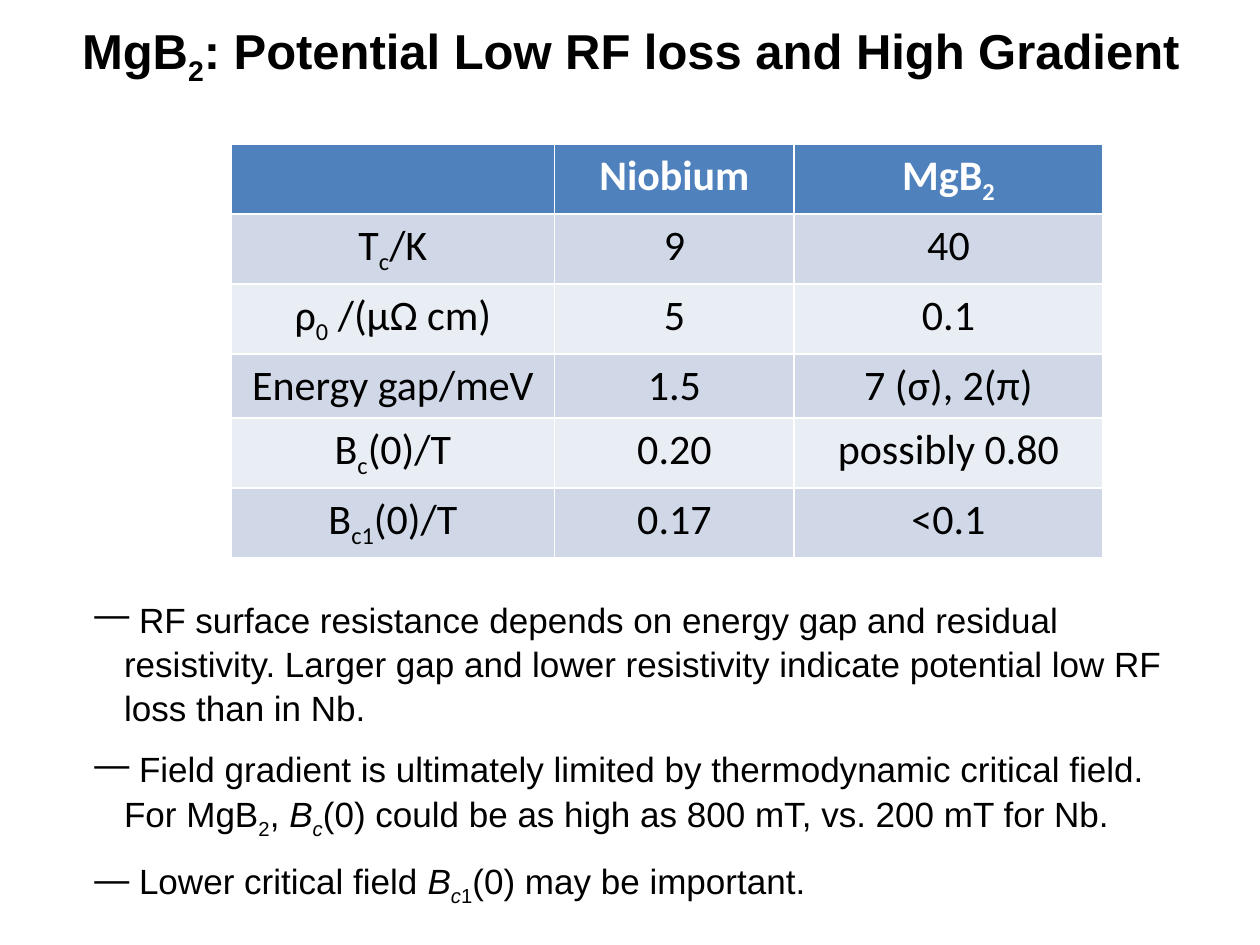
from dataclasses import dataclass

import pptx
import pptx.dml.color
import pptx.enum.text
import pptx.oxml
import pptx.oxml.ns
import pptx.util

Pt = pptx.util.Pt
RGB = pptx.dml.color.RGBColor.from_string
CENTER = pptx.enum.text.PP_ALIGN.CENTER


@dataclass(frozen=True)
class Theme:
    heading_font: str = "Arial"
    table_font: str = "Calibri"
    title_size: int = 28
    table_size: int = 24
    body_size: int = 20
    text: str = "000000"
    header_text: str = "FFFFFF"
    header_fill: str = "4F81BD"
    band_fills: tuple = ("D0D8E8", "E9EDF4")


THEME = Theme()

# Text is a list of pieces: (wording, flags), where flags may hold
# "s" for subscript and "i" for italic.
TITLE = [("MgB", ""), ("2", "s"), (": Potential Low RF loss and High Gradient", "")]

TABLE_ROWS = [
    [[], [("Niobium", "")], [("MgB", ""), ("2", "s")]],
    [[("T", ""), ("c", "s"), ("/K", "")], [("9", "")], [("40", "")]],
    [[("ρ", ""), ("0", "s"), (" /(μΩ cm)", "")], [("5", "")], [("0.1", "")]],
    [[("Energy gap/meV", "")], [("1.5", "")], [("7 (σ), 2(π)", "")]],
    [[("B", ""), ("c", "s"), ("(0)/T", "")], [("0.20", "")], [("possibly 0.80", "")]],
    [[("B", ""), ("c1", "s"), ("(0)/T", "")], [("0.17", "")], [("<0.1", "")]],
]
COLUMN_WIDTHS = [185, 136.8, 176.4]
ROW_HEIGHT = 36.72

BULLETS = [
    [(" RF surface resistance depends on energy gap and residual resistivity. "
      "Larger gap and lower resistivity indicate potential low RF loss than in Nb.", "")],
    [(" Field gradient is ultimately limited by thermodynamic critical field. For MgB", ""),
     ("2", "s"), (", ", ""), ("B", "i"), ("c", "si"),
     ("(0) could be as high as 800 mT, vs. 200 mT for Nb.", "")],
    [(" Lower critical field ", ""), ("B", "i"), ("c", "si"), ("1", "s"),
     ("(0) may be important.", "")],
]


def write_pieces(paragraph, pieces, font_name, size, color, bold=False):
    for wording, flags in pieces:
        run = paragraph.add_run()
        run.text = wording
        run.font.name = font_name
        run.font.size = Pt(size)
        run.font.bold = bold
        run.font.italic = "i" in flags
        run.font.color.rgb = RGB(color)
        if "s" in flags:
            run._r.get_or_add_rPr().set("baseline", "-25000")


def set_bullet(paragraph, character, indent):
    """Give the paragraph a hanging bullet and half a line of space before it."""
    properties = paragraph._p.get_or_add_pPr()
    properties.set("marL", str(Pt(indent)))
    properties.set("indent", str(-Pt(indent)))
    namespace = pptx.oxml.ns.nsdecls("a")
    for xml in (
        f'<a:spcBef {namespace}><a:spcPct val="50000"/></a:spcBef>',
        f'<a:buChar {namespace} char="{character}"/>',
    ):
        properties.append(pptx.oxml.parse_xml(xml))


def add_title(slide):
    title = slide.shapes.title
    title.left, title.top, title.width, title.height = Pt(24.5), Pt(8), Pt(672), Pt(41)
    frame = title.text_frame
    frame.word_wrap = False
    frame.auto_size = pptx.enum.text.MSO_AUTO_SIZE.SHAPE_TO_FIT_TEXT
    frame.vertical_anchor = pptx.enum.text.MSO_ANCHOR.TOP
    paragraph = frame.paragraphs[0]
    paragraph.alignment = CENTER
    write_pieces(paragraph, TITLE, THEME.heading_font, THEME.title_size, THEME.text, bold=True)


def add_property_table(slide):
    table = slide.shapes.add_table(
        len(TABLE_ROWS), len(COLUMN_WIDTHS), Pt(132), Pt(82.2),
        Pt(sum(COLUMN_WIDTHS)), Pt(ROW_HEIGHT * len(TABLE_ROWS)),
    ).table
    for column, width in zip(table.columns, COLUMN_WIDTHS):
        column.width = Pt(width)
    for row_index, row in enumerate(TABLE_ROWS):
        is_header = row_index == 0
        fill = THEME.header_fill if is_header else THEME.band_fills[(row_index - 1) % 2]
        color = THEME.header_text if is_header else THEME.text
        for column_index, pieces in enumerate(row):
            cell = table.cell(row_index, column_index)
            cell.fill.solid()
            cell.fill.fore_color.rgb = RGB(fill)
            paragraph = cell.text_frame.paragraphs[0]
            paragraph.alignment = CENTER
            paragraph.font.size = Pt(THEME.table_size)
            write_pieces(paragraph, pieces, THEME.table_font, THEME.table_size, color, is_header)


def add_bullets(slide):
    frame = slide.shapes.add_textbox(Pt(46.8), Pt(337), Pt(647.3), Pt(177)).text_frame
    frame.word_wrap = True
    frame.auto_size = pptx.enum.text.MSO_AUTO_SIZE.SHAPE_TO_FIT_TEXT
    for index, pieces in enumerate(BULLETS):
        paragraph = frame.paragraphs[0] if index == 0 else frame.add_paragraph()
        paragraph.line_spacing = 1.05
        set_bullet(paragraph, "―", 17)
        write_pieces(paragraph, pieces, THEME.heading_font, THEME.body_size, THEME.text)


def main():
    presentation = pptx.Presentation()
    presentation.slide_width, presentation.slide_height = Pt(720), Pt(540)
    slide = presentation.slides.add_slide(presentation.slide_layouts[5])
    add_title(slide)
    add_property_table(slide)
    add_bullets(slide)
    presentation.save("out.pptx")


if __name__ == "__main__":
    main()
